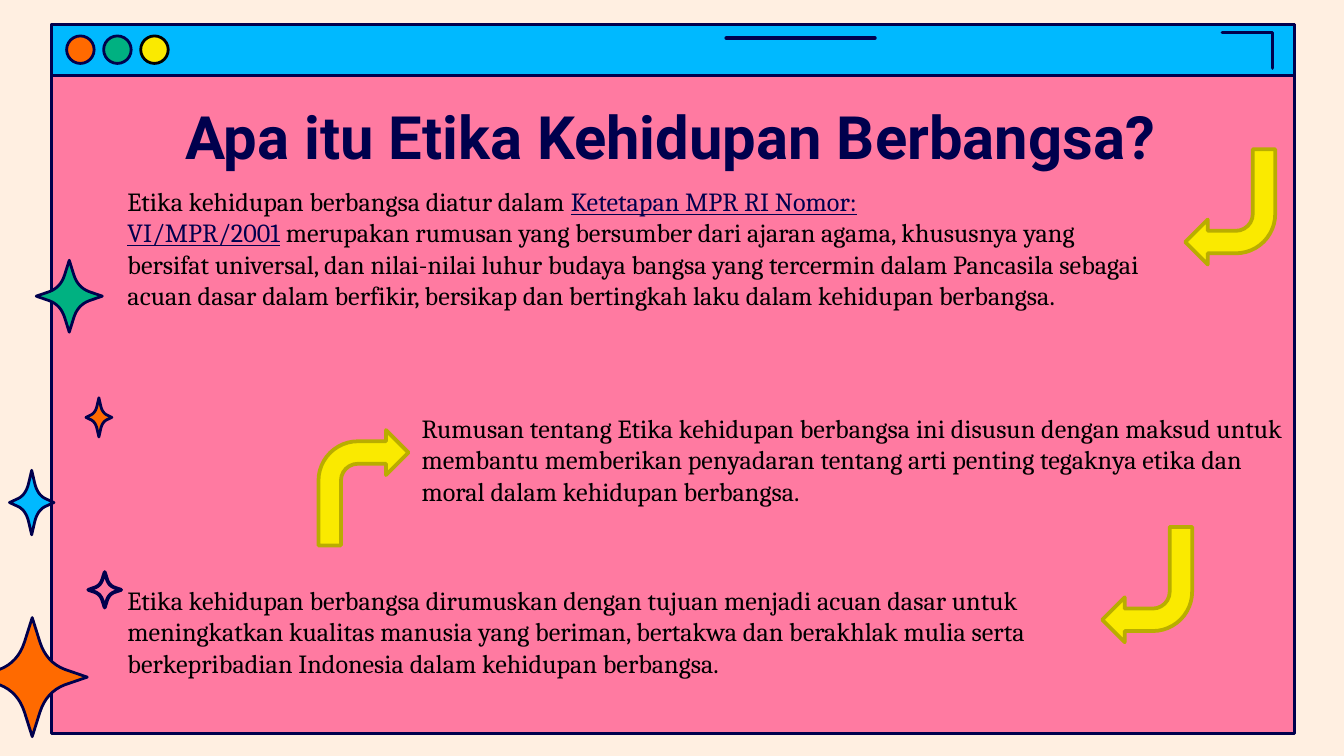
from lxml import etree
from pptx import Presentation
from pptx.dml.color import RGBColor
from pptx.enum.shapes import MSO_CONNECTOR, MSO_SHAPE
from pptx.enum.text import MSO_ANCHOR, PP_ALIGN
from pptx.oxml.ns import qn
from pptx.util import Cm, Pt

RECTANGLE, OVAL, BENT_ARROW = MSO_SHAPE.RECTANGLE, MSO_SHAPE.OVAL, MSO_SHAPE.BENT_ARROW
STRAIGHT = MSO_CONNECTOR.STRAIGHT
TOP, CENTER = MSO_ANCHOR.TOP, PP_ALIGN.CENTER

COLORS = {
    "cream": "FFEFE1", "pink": "FF7AA1", "navy": "00004D", "blue": "00B9FF",
    "green": "00B181", "yellow": "FAEA00", "orange": "FF6A00",
    "olive": "B9AD00", "black": "000000",
}
COLORS = {name: RGBColor.from_string(value) for name, value in COLORS.items()}
NBSP = chr(160)


def paint(shape, fill, line="navy", width=1.5):
    shape.shadow.inherit = False
    if fill:
        shape.fill.solid()
        shape.fill.fore_color.rgb = COLORS[fill]
    else:
        shape.fill.background()
    shape.line.color.rgb = COLORS[line]
    shape.line.width = Pt(width)


def add_text(left, top, width, height, runs, size, font, bold=None):
    """Add a one-paragraph text box; runs are (text, colour, underline)."""
    box = slide.shapes.add_textbox(Cm(left), Cm(top), Cm(width), Cm(height))
    frame = box.text_frame
    frame.word_wrap = True
    frame.vertical_anchor = TOP
    paragraph = frame.paragraphs[0]
    paragraph.font.size = Pt(size)
    paragraph.font.name = font
    paragraph.font.bold = bold
    for text, color, underline in runs:
        run = paragraph.add_run()
        run.text = text
        run.font.color.rgb = COLORS[color]
        run.font.underline = underline
    return box


presentation = Presentation()
presentation.slide_width, presentation.slide_height = Cm(25.4), Cm(14.29)
slide = presentation.slides.add_slide(presentation.slide_layouts[6])
slide.background.fill.solid()
slide.background.fill.fore_color.rgb = COLORS["cream"]

# Window and its title bar
for height, color in ((13.41, "pink"), (0.97, "blue")):
    panel = slide.shapes.add_shape(RECTANGLE, Cm(0.98), Cm(0.46), Cm(23.48), Cm(height))
    paint(panel, color)

# Corner bracket and dash in the title bar
builder = slide.shapes.build_freeform(Cm(23.1), Cm(0.61))
builder.add_line_segments([(Cm(24.05), Cm(0.61)), (Cm(24.05), Cm(1.29))], close=False)
bracket = builder.convert_to_shape()
paint(bracket, None, width=1.75)
bracket.line._get_or_add_ln().set("cap", "rnd")

dash = slide.shapes.add_connector(STRAIGHT, Cm(13.73), Cm(0.72), Cm(16.53), Cm(0.72))
dash.line.color.rgb = COLORS["navy"]
dash.line.width = Pt(2.25)
dash.line._get_or_add_ln().set("cap", "rnd")
etree.SubElement(dash._element.spPr, qn("a:effectLst"))

# Window buttons
buttons = (("orange", "navy"), ("green", "navy"), ("yellow", "black"))
for index, (color, outline) in enumerate(buttons):
    button = slide.shapes.add_shape(
        OVAL, Cm(1.26 + 0.7 * index), Cm(0.68), Cm(0.52), Cm(0.52))
    paint(button, color, outline)

# Sparkles: one curved quarter on a unit star, mirrored around the centre
curve = ((0.14, -0.59), (0.22, -0.36), (0.37, -0.21), (0.59, -0.13))
quarter = [(0, -1)]
for step in range(9):
    t = step / 8
    weights = ((1 - t) ** 3, 3 * t * (1 - t) ** 2, 3 * t ** 2 * (1 - t), t ** 3)
    quarter.append(tuple(
        sum(weight * point[axis] for weight, point in zip(weights, curve))
        for axis in (0, 1)))
quarter.append((1, 0))
right = quarter + [(x, -y) for x, y in quarter[-2::-1]]
outline_points = right + [(-x, y) for x, y in right[-2:0:-1]]

sparkles = (  # centre x, centre y, width, height, fill, line width
    (0.6, 9.5, 0.84, 1.22, "blue", 1.5),
    (1.98, 11.15, 0.62, 0.67, None, 2),
    (0.61, 12.8, 2.08, 2.25, "orange", 1.5),
    (1.31, 5.6, 1.25, 1.36, "green", 1.5),
    (1.87, 7.89, 0.49, 0.74, "orange", 1.5),
)
for center_x, center_y, width, height, color, line_width in sparkles:
    points = [(Cm(center_x + x * width / 2), Cm(center_y + y * height / 2))
              for x, y in outline_points]
    builder = slide.shapes.build_freeform(*points[0])
    builder.add_line_segments(points[1:])
    paint(builder.convert_to_shape(), color, width=line_width)

# Title
title = add_text(1.93, 1.63, 21.49, 1.6,
                 [("Apa itu Etika Kehidupan Berbangsa?", "navy", None)],
                 32, "Roboto", True)
title.text_frame.paragraphs[0].alignment = CENTER
title.text_frame.margin_top = title.text_frame.margin_bottom = Cm(0.25)

# Body texts
bodies = (
    (2.16, 3.38, 19.71, 3.25, [
        ("Etika kehidupan berbangsa diatur dalam" + NBSP, "black", None),
        ("Ketetapan MPR RI Nomor: VI/MPR/2001", "navy", True),
        (NBSP + "merupakan rumusan yang bersumber dari ajaran agama, khususnya "
         "yang bersifat universal, dan nilai-nilai luhur budaya bangsa yang tercermin "
         "dalam Pancasila sebagai acuan dasar dalam berfikir, bersikap dan bertingkah "
         "laku dalam kehidupan berbangsa.", "black", None)]),
    (7.72, 7.67, 17.22, 2.06, [
        ("Rumusan tentang Etika kehidupan berbangsa ini disusun dengan maksud untuk "
         "membantu memberikan penyadaran tentang arti penting tegaknya etika dan "
         "moral dalam kehidupan berbangsa.", "black", None)]),
    (2.16, 10.92, 19.91, 2.06, [
        ("Etika kehidupan berbangsa dirumuskan dengan tujuan menjadi acuan dasar untuk "
         "meningkatkan kualitas manusia yang beriman, bertakwa dan berakhlak mulia "
         "serta berkepribadian Indonesia dalam kehidupan berbangsa.", "black", None)]),
)
for left, top, width, height, runs in bodies:
    add_text(left, top, width, height, runs, 14, "Cambria")

# Bent arrows
for left, top, rotation in ((6.02, 8.13, 0), (20.83, 9.96, 180), (22.4, 2.82, 180)):
    arrow = slide.shapes.add_shape(BENT_ARROW, Cm(left), Cm(top), Cm(1.7), Cm(2.18))
    arrow.rotation = rotation
    paint(arrow, "yellow", "olive", 2)

presentation.save("out.pptx")
